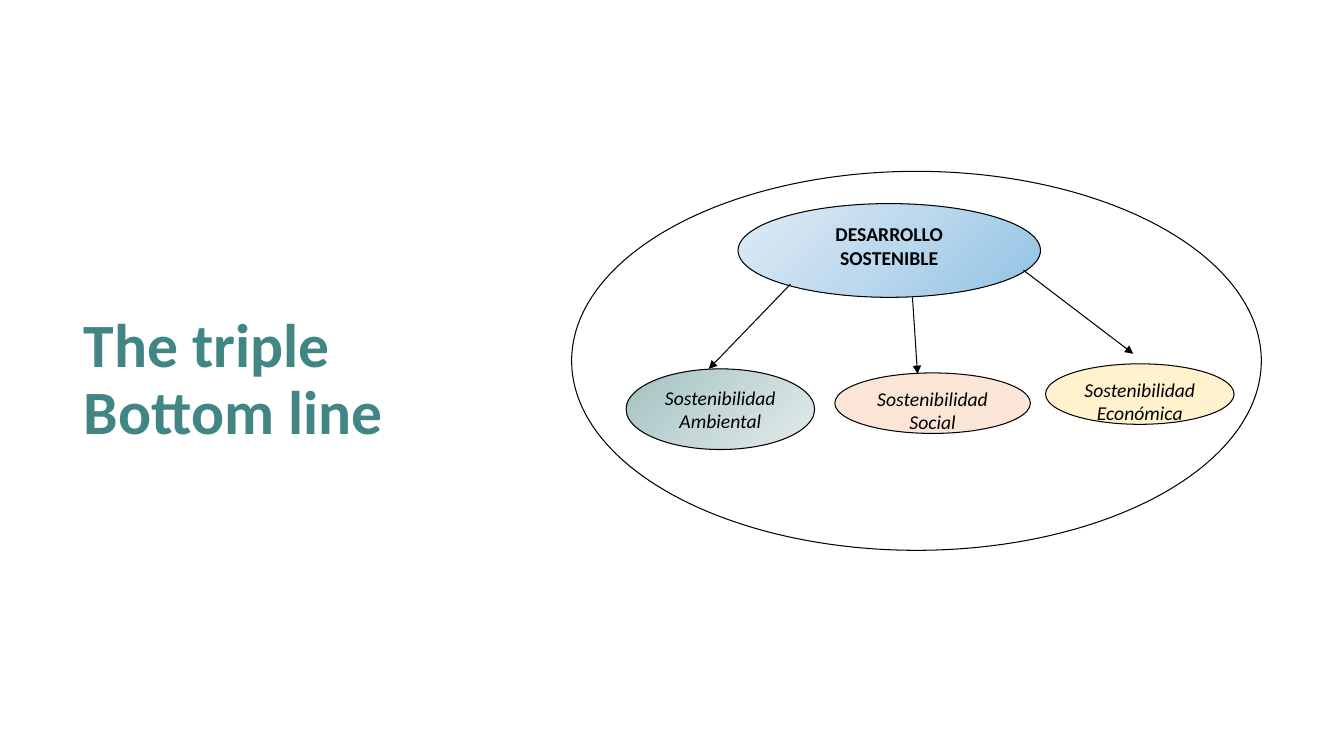
from dataclasses import dataclass

from lxml import etree
from pptx import Presentation
from pptx import util as u
from pptx.dml.color import RGBColor
from pptx.enum import shapes, text
from pptx.oxml import parse_xml
from pptx.oxml.ns import nsdecls, qn

PX = u.Inches(1) // 100
FONT = "Calibri"
BLACK = "000000"


@dataclass(frozen=True)
class Glow:
    """Circular gradient that spreads from one corner of its shape."""
    colors: tuple[str, str, str]
    corner: str


@dataclass(frozen=True)
class Oval:
    box: tuple[int, int, int, int]
    fill: str | Glow
    label: str = ""
    bold: bool = False
    italic: bool = False


@dataclass(frozen=True)
class Arrow:
    start: tuple[int, int]
    end: tuple[int, int]


OVALS = (
    Oval((567, 170, 684, 376), "FFFFFF"),
    Oval((621, 366, 187, 80), Glow(("9FC1C0", "C5D8D7", "E3EBEB"), 'r="100000" b="100000"'),
         "Sostenibilidad Ambiental", italic=True),
    Oval((828, 370, 194, 60), "FBE5D6", "Sostenibilidad Social", italic=True),
    Oval((1037, 361, 187, 60), "FFF2CC", "Sostenibilidad Económica", italic=True),
    Oval((732, 202, 300, 93), Glow(("90C3E5", "BCD8ED", "DFEBF5"), 'l="100000" t="100000"'),
         "DESARROLLO SOSTENIBLE", bold=True),
)
ARROWS = (
    Arrow((905, 295), (910, 371)),
    Arrow((1015, 268), (1124, 351)),
    Arrow((784, 282), (703, 366)),
)


def rgb(color: str) -> RGBColor:
    return RGBColor.from_string(color)


def emu(*lengths: int) -> list[int]:
    return [length * PX for length in lengths]


def add_text(paragraph, words: str, size: int, color: str,
             bold: bool = False, italic: bool = False) -> None:
    run = paragraph.add_run()
    run.text = words
    font = run.font
    font.name, font.size, font.bold, font.italic = FONT, u.Pt(size), bold, italic
    font.color.rgb = rgb(color)


def draw_outline(line) -> None:
    line.color.rgb = rgb(BLACK)
    line.width = u.Pt(0.75)


def apply_glow(shape, glow: Glow) -> None:
    """Put a circular gradient in place of the solid fill."""
    stops = "".join(
        f'<a:gs pos="{i * 50000}"><a:srgbClr val="{color}"/></a:gs>'
        for i, color in enumerate(glow.colors))
    gradient = parse_xml(
        f'<a:gradFill {nsdecls("a")} rotWithShape="1"><a:gsLst>{stops}</a:gsLst>'
        f'<a:path path="circle"><a:fillToRect {glow.corner}/></a:path></a:gradFill>')
    properties = shape.element.spPr
    properties.replace(properties.find(qn("a:solidFill")), gradient)


def draw_oval(slide, oval: Oval) -> None:
    shape = slide.shapes.add_shape(shapes.MSO_SHAPE.OVAL, *emu(*oval.box))
    shape.shadow.inherit = False
    shape.fill.solid()
    if isinstance(oval.fill, Glow):
        apply_glow(shape, oval.fill)
    else:
        shape.fill.fore_color.rgb = rgb(oval.fill)
    draw_outline(shape.line)
    if oval.label:
        frame = shape.text_frame
        frame.word_wrap = True
        frame.vertical_anchor = text.MSO_ANCHOR.TOP
        paragraph = frame.paragraphs[0]
        paragraph.alignment = text.PP_ALIGN.CENTER
        add_text(paragraph, oval.label, 14, BLACK, oval.bold, oval.italic)


def draw_arrow(slide, arrow: Arrow) -> None:
    connector = slide.shapes.add_connector(
        shapes.MSO_CONNECTOR.STRAIGHT, *emu(*arrow.start, *arrow.end))
    draw_outline(connector.line)
    properties = connector.element.spPr
    etree.SubElement(properties.find(qn("a:ln")), qn("a:tailEnd"), type="triangle")
    etree.SubElement(properties, qn("a:effectLst"))


def write_title(slide) -> None:
    title = slide.shapes.title
    title.left, title.top, title.width, title.height = emu(73, 202, 386, 352)
    frame = title.text_frame
    frame.word_wrap = True
    frame.auto_size = text.MSO_AUTO_SIZE.NONE
    frame.vertical_anchor = text.MSO_ANCHOR.MIDDLE
    paragraph = frame.paragraphs[0]
    paragraph.alignment = text.PP_ALIGN.LEFT
    paragraph.line_spacing = 0.9
    add_text(paragraph, "The triple Bottom line", 44, "418584", bold=True)


def main() -> None:
    deck = Presentation()
    deck.slide_width, deck.slide_height = emu(1333, 750)
    slide = deck.slides.add_slide(deck.slide_layouts.get_by_name("Title Only"))
    write_title(slide)
    for oval in OVALS:
        draw_oval(slide, oval)
    for arrow in ARROWS:
        draw_arrow(slide, arrow)
    deck.save("out.pptx")


if __name__ == "__main__":
    main()
